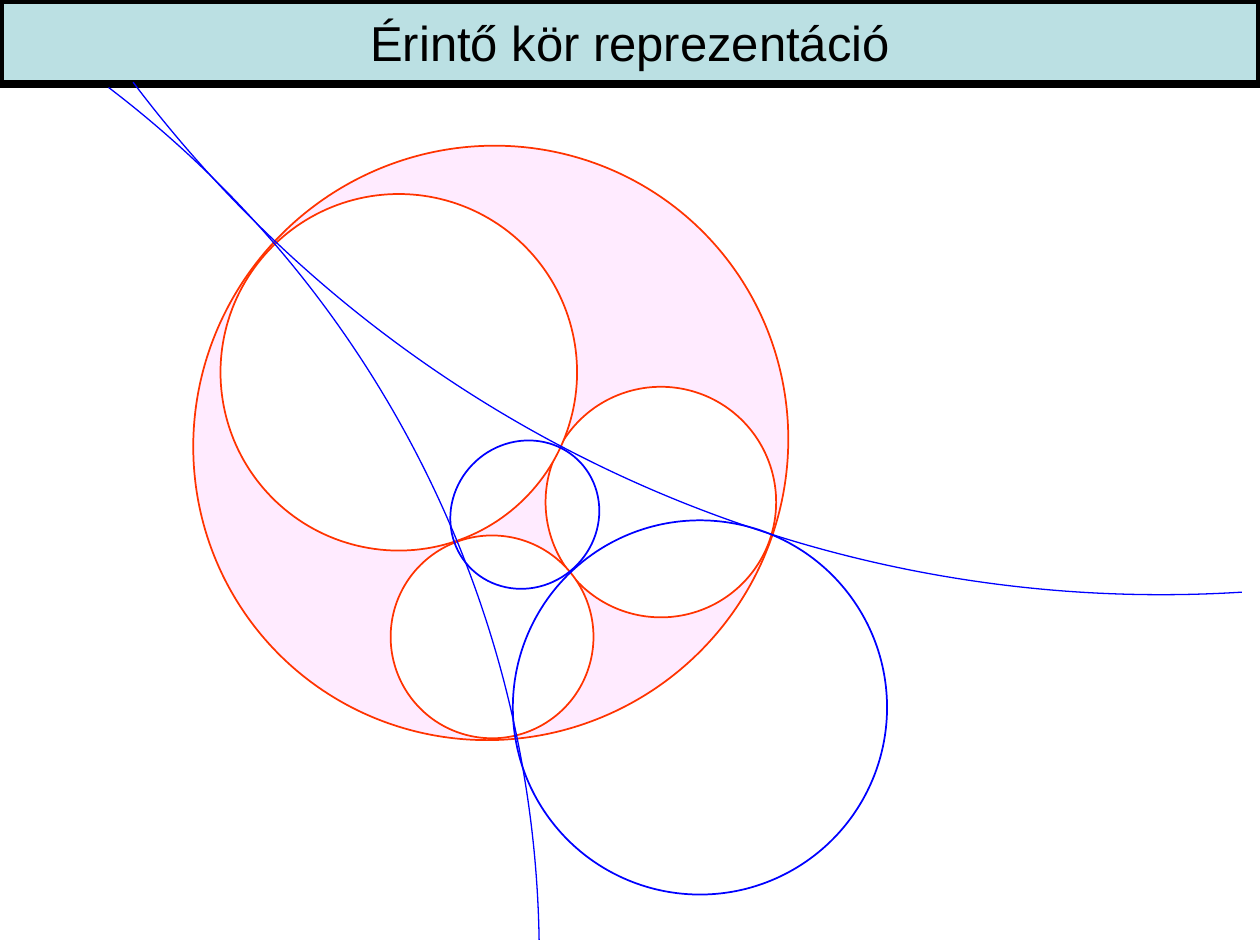
from pptx import Presentation
from pptx.dml.color import RGBColor
from pptx.enum.shapes import MSO_SHAPE
from pptx.enum.text import MSO_ANCHOR, PP_ALIGN
from pptx.util import Inches, Pt

ELLIPSE, ARC = MSO_SHAPE.OVAL, MSO_SHAPE.ARC
MIDDLE, CENTER = MSO_ANCHOR.MIDDLE, PP_ALIGN.CENTER
RED, BLUE, PINK, WHITE, BLACK, TEAL = (
    "FF3300", "0000FF", "FFEBFF", "FFFFFF", "000000", "BBE0E3")
TILT = 47.3
TANGENT_CIRCLES = [
    ((1.55, 1.14, 4.69, 4.75), PINK),
    ((4.33, 3.07, 1.83, 1.83), WHITE),
    ((1.75, 1.54, 2.83, 2.83), WHITE),
    ((3.10, 4.25, 1.61, 1.61), WHITE),
]
DUAL_CIRCLES = [(3.59, 3.48, 1.15, 1.21), (4.07, 4.13, 2.97, 2.97)]
DUAL_ARCS = [
    ((-1, -15.71, 20.43, 20.43), 86.4, 143),
    ((-13.07, -1.08, 17.35, 17.35), 307.3, 359.1),
]


def rgb(color):
    """Turn a hex string into a colour."""
    return RGBColor.from_string(color)


def paint(shape, fill, line, width):
    """Set fill and outline; a fill of None leaves the shape hollow."""
    if fill:
        shape.fill.solid()
        shape.fill.fore_color.rgb = rgb(fill)
    else:
        shape.fill.background()
    shape.line.color.rgb = rgb(line)
    shape.line.width = Pt(width)


def add_title(s, box, text):
    """Place the title placeholder as a framed banner in the box."""
    sp = s.shapes.title
    sp.left, sp.top, sp.width, sp.height = map(Inches, box)
    paint(sp, TEAL, BLACK, 4.5)
    tf = sp.text_frame
    tf.text = text
    tf.vertical_anchor = MIDDLE
    p = tf.paragraphs[0]
    p.alignment = CENTER
    font = p.runs[0].font
    for name, value in {"name": "Arial", "size": Pt(28), "bold": False}.items():
        setattr(font, name, value)
    font.color.rgb = rgb(BLACK)


def add_circle(s, box, fill, line):
    """Add one tilted circle in the box."""
    sp = s.shapes.add_shape(ELLIPSE, *map(Inches, box))
    sp.shadow.inherit = False
    sp.rotation = TILT
    paint(sp, fill, line, 1)


def add_arc(s, box, start, end):
    """Add the arc between two clockwise angles of the circle in the box."""
    sp = s.shapes.add_shape(ARC, *map(Inches, box))
    sp.shadow.inherit = False
    for i, degrees in enumerate((start, end)):
        sp.adjustments[i] = degrees * 60000 / 100000
    paint(sp, None, BLUE, 0.75)


def add_representation(s):
    """Draw the tangent circles and the dual circles over them."""
    for box, fill in TANGENT_CIRCLES:
        add_circle(s, box, fill, RED)
    for arc in DUAL_ARCS:
        add_arc(s, *arc)
    for box in DUAL_CIRCLES:
        add_circle(s, box, None, BLUE)


def main():
    """Build and save the slide."""
    prs = Presentation()
    prs.slide_width, prs.slide_height = Inches(10), Inches(7.5)
    s = prs.slides.add_slide(prs.slide_layouts[5])
    add_title(s, (0, 0, 10, 0.67), "Érintő kör reprezentáció")
    add_representation(s)
    prs.save("out.pptx")


if __name__ == "__main__":
    main()
